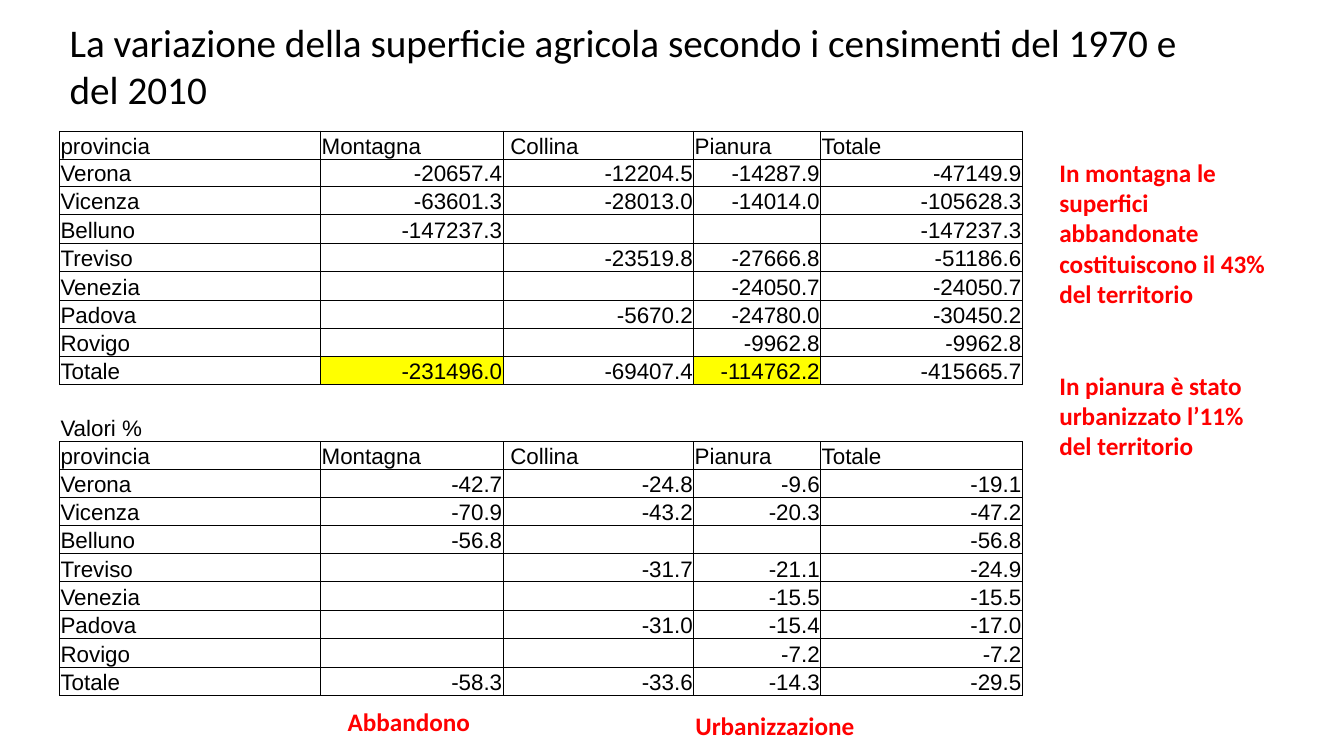
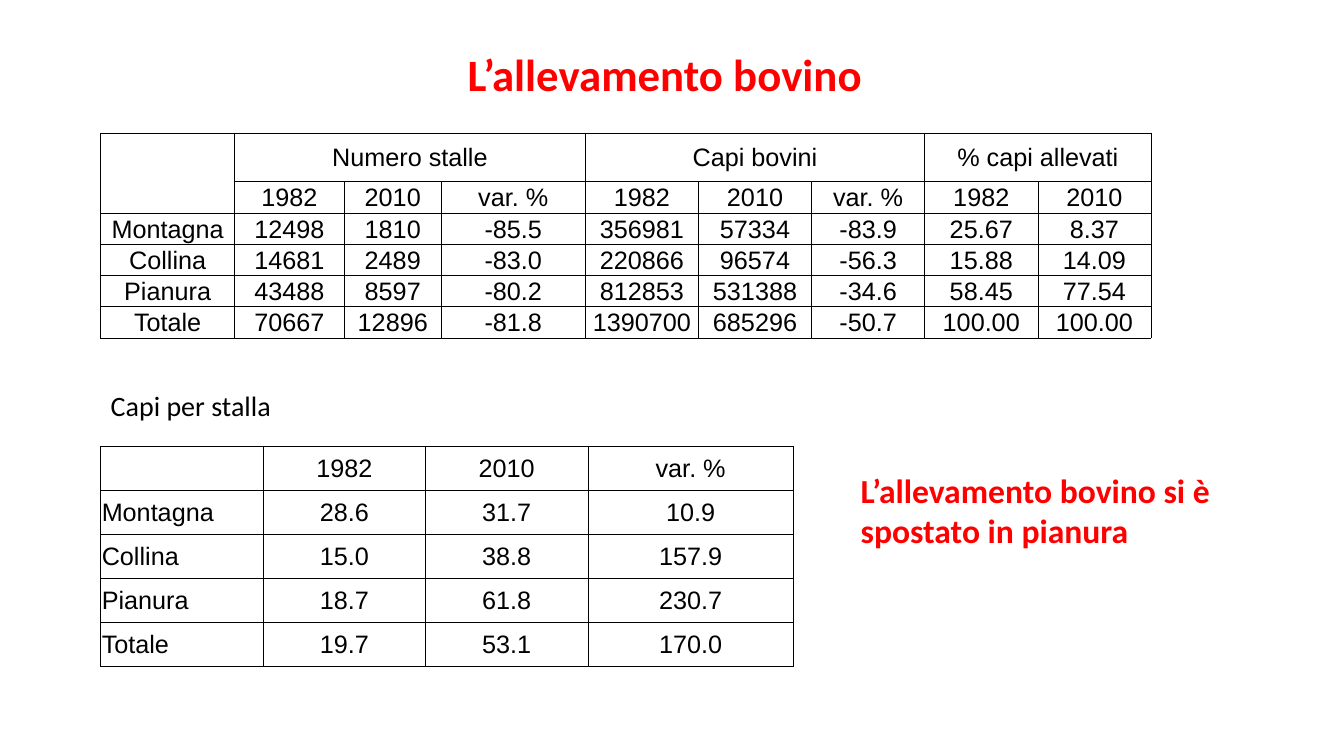
import lxml.etree
import pptx
import pptx.dml.color
import pptx.enum.text
import pptx.oxml.ns
import pptx.util

COLOURS = {"text": "000000", "accent": "FF0000", "highlight": "FFFF00", "border": "000000"}
LEFT = pptx.enum.text.PP_ALIGN.LEFT
CENTER = pptx.enum.text.PP_ALIGN.CENTER
RIGHT = pptx.enum.text.PP_ALIGN.RIGHT
TOP = pptx.enum.text.MSO_ANCHOR.TOP
MIDDLE = pptx.enum.text.MSO_ANCHOR.MIDDLE
BOTTOM = pptx.enum.text.MSO_ANCHOR.BOTTOM

PROVINCE_HEAD = "provincia|Montagna| Collina|Pianura|Totale"
PROVINCE_ROWS = [
    PROVINCE_HEAD,
    "Verona|-20657.4|-12204.5|-14287.9|-47149.9",
    "Vicenza|-63601.3|-28013.0|-14014.0|-105628.3",
    "Belluno|-147237.3|||-147237.3",
    "Treviso||-23519.8|-27666.8|-51186.6",
    "Venezia|||-24050.7|-24050.7",
    "Padova||-5670.2|-24780.0|-30450.2",
    "Rovigo|||-9962.8|-9962.8",
    "Totale|-231496.0|-69407.4|-114762.2|-415665.7",
    "||||",
    "Valori %||||",
    PROVINCE_HEAD,
    "Verona|-42.7|-24.8|-9.6|-19.1",
    "Vicenza|-70.9|-43.2|-20.3|-47.2",
    "Belluno|-56.8|||-56.8",
    "Treviso||-31.7|-21.1|-24.9",
    "Venezia|||-15.5|-15.5",
    "Padova||-31.0|-15.4|-17.0",
    "Rovigo|||-7.2|-7.2",
    "Totale|-58.3|-33.6|-14.3|-29.5",
]
CATTLE_ROWS = [
    "|Numero stalle|||Capi bovini|||% capi allevati|",
    "|1982|2010|var. %|1982|2010|var. %|1982|2010",
    "Montagna|12498|1810|-85.5|356981|57334|-83.9|25.67|8.37",
    "Collina|14681|2489|-83.0|220866|96574|-56.3|15.88|14.09",
    "Pianura|43488|8597|-80.2|812853|531388|-34.6|58.45|77.54",
    "Totale|70667|12896|-81.8|1390700|685296|-50.7|100.00|100.00",
]
PER_STABLE_ROWS = [
    "|1982|2010|var. %",
    "Montagna|28.6|31.7|10.9",
    "Collina|15.0|38.8|157.9",
    "Pianura|18.7|61.8|230.7",
    "Totale|19.7|53.1|170.0",
]


def rgb(name):
    return pptx.dml.color.RGBColor.from_string(COLOURS[name])


def set_borders(cell, sides):
    """Draw the named sides (of L, R, T, B) and clear the others."""
    properties = cell._tc.get_or_add_tcPr()
    for index, side in enumerate("LRTB"):
        line = lxml.etree.Element(pptx.oxml.ns.qn("a:ln" + side), w=str(pptx.util.Pt(0.5)))
        if side in sides:
            fill = lxml.etree.SubElement(line, pptx.oxml.ns.qn("a:solidFill"))
            lxml.etree.SubElement(fill, pptx.oxml.ns.qn("a:srgbClr"), val=COLOURS["border"])
        else:
            lxml.etree.SubElement(line, pptx.oxml.ns.qn("a:noFill"))
        properties.insert(index, line)


class Deck:
    """Style and current page; lengths are percentages of the slide's size."""

    def __init__(self):
        self.file = pptx.Presentation()
        self.file.slide_width = pptx.util.Inches(13.33)
        self.file.slide_height = pptx.util.Inches(7.5)
        self.page = None

    def across(self, share):
        return round(self.file.slide_width * share / 100)

    def down(self, share):
        return round(self.file.slide_height * share / 100)

    def style(self, para, size, colour="text", bold=False, font="Calibri", align=LEFT):
        para.alignment = align
        for span in para.runs:
            span.font.name = font
            span.font.size = pptx.util.Pt(size)
            span.font.bold = bold
            span.font.color.rgb = rgb(colour)

    def frame(self, box):
        box.text_frame.word_wrap = True
        box.text_frame.auto_size = pptx.enum.text.MSO_AUTO_SIZE.NONE
        box.text_frame.vertical_anchor = TOP

    def add_page(self, title, place, size, **look):
        self.page = self.file.slides.add_slide(self.file.slide_layouts[5])
        box = self.page.shapes.title
        left, top, width, height = place
        box.left, box.top = self.across(left), self.down(top)
        box.width, box.height = self.across(width), self.down(height)
        box.text_frame.text = title
        self.frame(box)
        self.style(box.text_frame.paragraphs[0], size, **look)

    def note(self, texts, place, size=18, gap=0, colour="accent", bold=True):
        left, top, width, height = place
        box = self.page.shapes.add_textbox(
            self.across(left), self.down(top), self.across(width), self.down(height))
        box.text_frame.text = "\n".join(texts)
        self.frame(box)
        for index, para in enumerate(box.text_frame.paragraphs):
            if index:
                para.space_before = pptx.util.Pt(gap)
            self.style(para, size, colour, bold)

    def table(self, rows, corner, widths, heights, size, anchor=MIDDLE, names=CENTER,
              heads=CENTER, values=CENTER, open_cells=None, highlights=(), merges=()):
        """Build a grid; open_cells maps (row, column) to the only sides drawn."""
        grid = self.page.shapes.add_table(
            len(rows), len(widths), self.across(corner[0]), self.down(corner[1]),
            self.across(sum(widths)), self.down(sum(heights))).table
        grid.first_row = grid.horz_banding = False
        for column, width in zip(grid.columns, widths):
            column.width = self.across(width)
        for row, height in zip(grid.rows, heights):
            row.height = self.down(height)
        for r, line in enumerate(rows):
            for c, text in enumerate(line.split("|")):
                cell = grid.cell(r, c)
                cell.margin_left = cell.margin_right = cell.margin_top = pptx.util.Inches(0.01)
                cell.margin_bottom = 0
                cell.vertical_anchor = anchor
                if (r, c) in highlights:
                    cell.fill.solid()
                    cell.fill.fore_color.rgb = rgb("highlight")
                else:
                    cell.fill.background()
                set_borders(cell, (open_cells or {}).get((r, c), "LRTB"))
                cell.text_frame.text = text
                para = cell.text_frame.paragraphs[0]
                align = values if text[-1:].isdigit() else heads if c else names
                self.style(para, size, font="Arial", align=align)
                if not text:
                    lxml.etree.SubElement(
                        para._p, pptx.oxml.ns.qn("a:endParaRPr"), sz=str(size * 100))
        for row, first, last in merges:
            grid.cell(row, first).merge(grid.cell(row, last))


def farmland(deck):
    deck.add_page("La variazione della superficie agricola secondo i censimenti del 1970 e del 2010",
                  (4.43, 1.73, 86.78, 13.87), 28)
    gap_rows = {(row, column): side for row, side in ((9, "T"), (10, "B")) for column in range(5)}
    deck.table(PROVINCE_ROWS, (4.43, 17.33), [19.43, 13.58, 14.18, 9.45, 15],
               [3.69] * len(PROVINCE_ROWS), 16, BOTTOM, LEFT, LEFT, RIGHT,
               open_cells=gap_rows, highlights=[(8, 1), (8, 3)])
    deck.note(["Abbandono"], (25.13, 92.8, 13.05, 5.33))
    deck.note(["Urbanizzazione"], (51, 93.33, 16.73, 5.33))
    deck.note(["In montagna le superfici abbandonate costituiscono il 43% del territorio",
               "In pianura è stato urbanizzato l’11% del territorio"],
              (78.08, 20.13, 17.18, 41.73), gap=44)


def cattle(deck):
    deck.add_page("L’allevamento bovino", (7.5, 5.47, 83.93, 8.53), 32,
                  colour="accent", bold=True, align=CENTER)
    deck.table(CATTLE_ROWS, (7.5, 17.6), [9.95, 8.18, 7.2, 10.73] + [8.42] * 5,
               [6.4] + [4.13] * 5, 18, open_cells={(0, 0): "LTR", (1, 0): "LRB"},
               merges=[(0, 1, 3), (0, 4, 6), (0, 7, 8)])
    deck.note(["Capi per stalla"], (7.5, 50.8, 54.15, 5.87), 20, colour="text", bold=False)
    deck.table(PER_STABLE_ROWS, (7.5, 59.07), [12.08] * 3 + [15.3],
               [5.81] * len(PER_STABLE_ROWS), 18, names=LEFT)
    deck.note(["L’allevamento bovino si è spostato in pianura"], (63.3, 61.47, 28.13, 12.13), 24)


def main():
    deck = Deck()
    farmland(deck)
    cattle(deck)
    deck.file.save("out.pptx")


if __name__ == "__main__":
    main()
